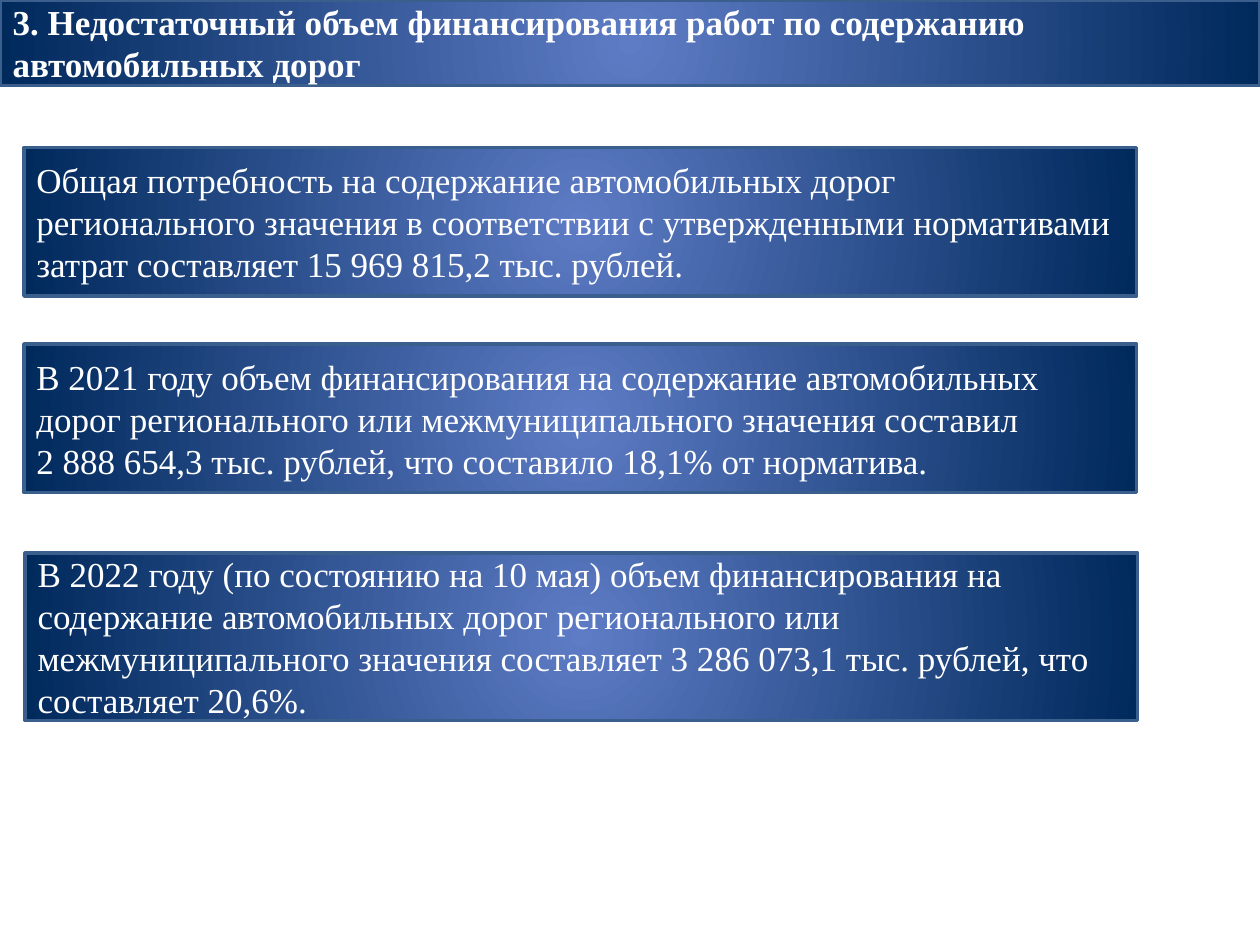
"""Build a slide on the shortfall in road maintenance funding."""
from lxml.etree import SubElement
from pptx import Presentation
from pptx.dml.color import RGBColor
from pptx.enum.shapes import MSO_SHAPE
from pptx.enum.text import MSO_ANCHOR, MSO_AUTO_SIZE, PP_ALIGN
from pptx.oxml.ns import qn
from pptx.util import Inches, Pt

COLORS = {"core": "5E7CC5", "edge": "00295C", "line": "3A5F8C", "text": "FFFFFF"}
FONT = "Times New Roman"
TITLE = "3. Недостаточный объем финансирования работ по содержанию автомобильных дорог"
BOXES = [
    (0.19, 1.17, 1.18,
     "Общая потребность на содержание автомобильных дорог регионального значения "
     "в соответствии с утвержденными нормативами затрат составляет "
     "15 969 815,2 тыс. рублей."),
    (0.19, 2.73, 1.18,
     "В 2021 году объем финансирования на содержание автомобильных дорог "
     "регионального или межмуниципального значения составил\n"
     "2 888 654,3 тыс. рублей, что составило 18,1% от норматива."),
    (0.2, 4.39, 1.33,
     "В 2022 году (по состоянию на 10 мая) объем финансирования на содержание "
     "автомобильных дорог регионального или межмуниципального значения составляет "
     "3 286 073,1 тыс. рублей, что составляет 20,6%."),
]


def color(name):
    return RGBColor.from_string(COLORS[name])


def style(shape, text, bold=False):
    shape.fill.gradient()
    for stop, name, pos in zip(shape.fill.gradient_stops, ("core", "edge"), (0, 1)):
        stop.color.rgb = color(name)
        stop.position = pos
    grad = shape.element.spPr.find(qn("a:gradFill"))
    grad.remove(grad.find(qn("a:lin")))
    path = SubElement(grad, qn("a:path"), path="circle")
    SubElement(path, qn("a:fillToRect"), l="50000", t="50000", r="50000", b="50000")
    shape.line.color.rgb = color("line")
    shape.line.width = Pt(2)

    frame = shape.text_frame
    frame.text = text
    frame.word_wrap = True
    frame.auto_size = MSO_AUTO_SIZE.NONE
    frame.vertical_anchor = MSO_ANCHOR.MIDDLE
    for para in frame.paragraphs:
        para.alignment = PP_ALIGN.LEFT
        for run in para.runs:
            run.font.name = FONT
            run.font.size = Pt(20)
            run.font.bold = bold
            run.font.color.rgb = color("text")


deck = Presentation()
deck.slide_width, deck.slide_height = Inches(10), Inches(7.5)
slide = deck.slides.add_slide(deck.slide_layouts[5])

title = slide.shapes.title
title.left, title.top = Inches(0), Inches(0)
title.width, title.height = Inches(10), Inches(0.68)
style(title, TITLE, bold=True)

for left, top, height, text in BOXES:
    box = slide.shapes.add_shape(
        MSO_SHAPE.RECTANGLE, Inches(left), Inches(top), Inches(8.83), Inches(height))
    box.shadow.inherit = False
    style(box, text)

deck.save("out.pptx")
